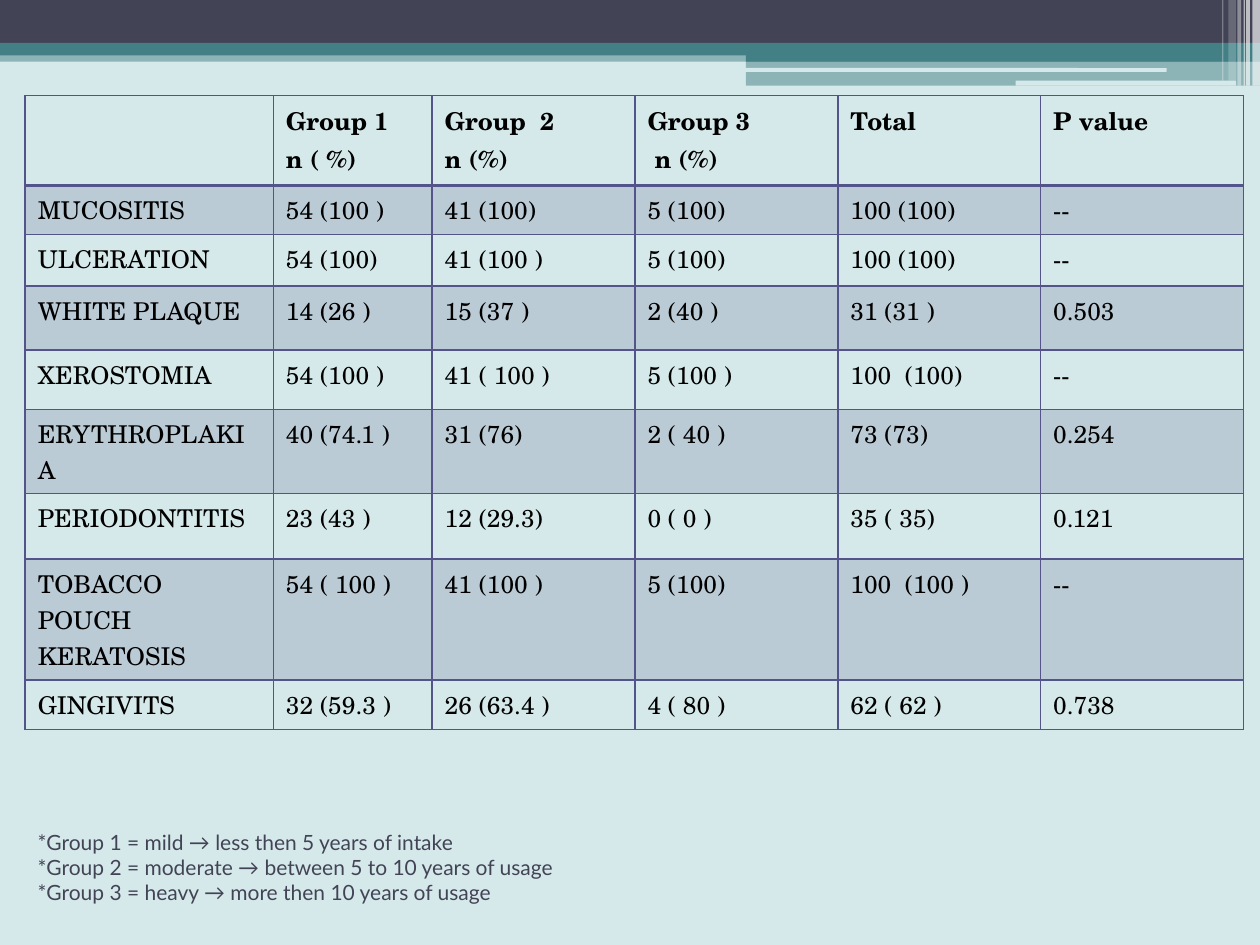
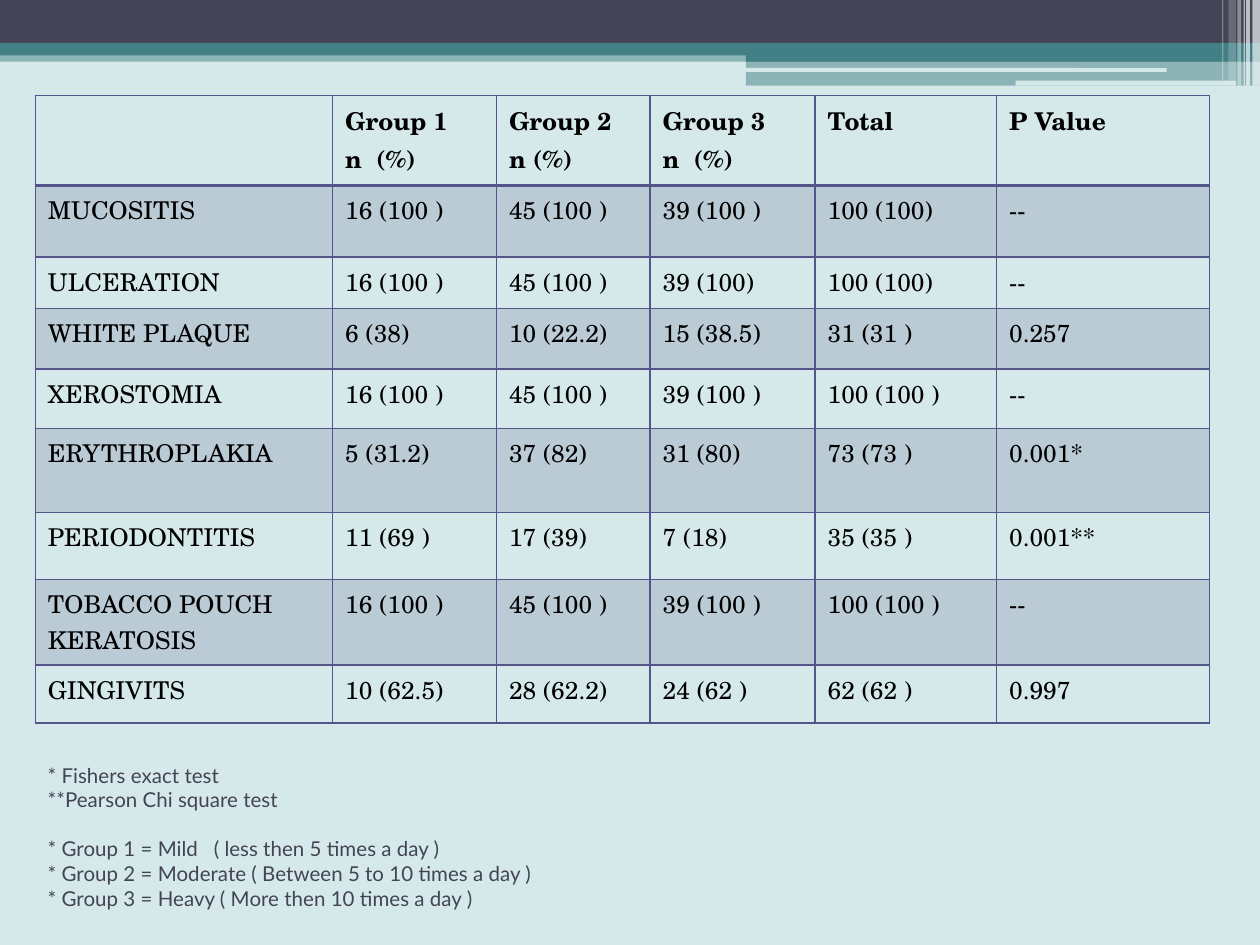
from lxml import etree
from pptx import Presentation
from pptx.dml.color import RGBColor
from pptx.enum.shapes import MSO_SHAPE
from pptx.enum.text import MSO_ANCHOR
from pptx.oxml.ns import qn
from pptx.util import Inches, Pt

RECT = MSO_SHAPE.RECTANGLE
ROUND = MSO_SHAPE.ROUNDED_RECTANGLE
MIDDLE = MSO_ANCHOR.MIDDLE
COLORS = {"back": "D6E9EA", "dark": "424456", "teal": "438086",
          "white": "FFFFFF", "rule": "53548A", "text": "000000"}
BODY, NOTE = "TeX Gyre Schola", "Lato"

BANDS = [
    (RECT, 0, 0.4, 10, 0.09, "teal", 50),
    (RECT, 0, 0, 10, 0.34, "dark", 100),
    (RECT, 0, 0.34, 10, 0.1, "teal", 100),
    (RECT, 5.92, 0.39, 4.08, 0.1, "teal", 100),
    (RECT, 5.92, 0.48, 4.08, 0.2, "teal", 50),
    (ROUND, 5.91, 0.54, 3.35, 0.03, "back", 100),
    (ROUND, 8.06, 0.64, 1.75, 0.04, "back", 100),
]
STRIPES = [(9.94, 0.06, 0.68, 65), (9.89, 0.03, 0.68, 65), (9.87, 0.01, 0.68, 60),
           (9.82, 0.03, 0.68, 40), (9.75, 0.06, 0.64, 20), (9.7, 0.01, 0.64, 30)]

YEARS = {
    "box": (0.2, 0.76),
    "cols": [1.97, 1.26, 1.61, 1.61, 1.61, 1.61],
    "rows": [0.71, 0.39, 0.41, 0.51, 0.47, 0.67, 0.52, 0.96, 0.39],
    "cells": [
        "|Group 1\nn ( %)|Group  2\nn (%)|Group 3\n n (%)|Total|P value",
        "MUCOSITIS|54 (100 )|41 (100)|5 (100)|100 (100)|--",
        "ULCERATION|54 (100)|41 (100 )|5 (100)|100 (100)|--",
        "WHITE PLAQUE|14 (26 )|15 (37 )|2 (40 )|31 (31 )|0.503",
        "XEROSTOMIA|54 (100 )|41 ( 100 )|5 (100 )|100  (100)|--",
        "ERYTHROPLAKIA|40 (74.1 )|31 (76)|2 ( 40 )|73 (73)|0.254",
        "PERIODONTITIS|23 (43 )|12 (29.3)|0 ( 0 )|35 ( 35)|0.121",
        "TOBACCO POUCH KERATOSIS|54 ( 100 )|41 (100 )|5 (100)|100  (100 )|--",
        "GINGIVITS|32 (59.3 )|26 (63.4 )|4 ( 80 )|62 ( 62 )|0.738",
    ],
    "note": (0.2, 5.88, 8.67, 2),
    "size": 12,
    "lines": [
        ["*Group 1 = mild → less then 5 years of intake",
         "*Group 2 = moderate → between 5 to 10 years of usage",
         "*Group 3 = heavy → more then 10 years of usage"],
    ],
}
TIMES = {
    "box": (0.28, 0.76),
    "cols": [2.36, 1.3, 1.22, 1.31, 1.44, 1.69],
    "rows": [0.71, 0.57, 0.41, 0.48, 0.47, 0.67, 0.53, 0.68, 0.46],
    "cells": [
        "|Group 1\nn  (%)|Group 2\nn (%)|Group 3\nn  (%)|Total|P Value",
        "MUCOSITIS|16 (100 )|45 (100 )|39 (100 )|100 (100)|--",
        "ULCERATION|16 (100 )|45 (100 )|39 (100)|100 (100)|--",
        "WHITE PLAQUE|6 (38)|10 (22.2)|15 (38.5)|31 (31 )|0.257",
        "XEROSTOMIA|16 (100 )|45 (100 )|39 (100 )|100 (100 )|--",
        "ERYTHROPLAKIA|5 (31.2)|37 (82)|31 (80)|73 (73 )|0.001*",
        "PERIODONTITIS|11 (69 )|17 (39)|7 (18)|35 (35 )|0.001**",
        "TOBACCO POUCH KERATOSIS|16 (100 )|45 (100 )|39 (100 )|100 (100 )|--",
        "GINGIVITS|10 (62.5)|28 (62.2)|24 (62 )|62 (62 )|0.997",
    ],
    "note": (0.28, 6.11, 8.67, 1.06),
    "size": 11.7,
    "lines": [
        ["* Fishers exact test", "**Pearson Chi square test"],
        ["* Group 1 = Mild   ( less then 5 times a day )",
         "* Group 2 = Moderate ( Between 5 to 10 times a day )",
         "* Group 3 = Heavy ( More then 10 times a day )"],
    ],
}


def color(name):
    """Return the named colour."""
    return RGBColor.from_string(COLORS[name])


def paint(fill, name, alpha, node):
    """Fill solidly, with an opacity in percent."""
    fill.solid()
    fill.fore_color.rgb = color(name)
    if alpha < 100:
        tone = node.find(qn("a:solidFill")).find(qn("a:srgbClr"))
        etree.SubElement(tone, qn("a:alpha"), val=str(alpha * 1000))


def style(para, font, size, name, bold=False):
    """Set the font of a paragraph."""
    para.font.name, para.font.size, para.font.bold = font, Pt(size), bold
    para.font.color.rgb = color(name)


def add_bar(slide, kind, x, y, w, h, name, alpha):
    """Draw one flat bar."""
    bar = slide.shapes.add_shape(kind, Inches(x), Inches(y), Inches(w), Inches(h))
    bar.shadow.inherit = False
    bar.line.fill.background()
    paint(bar.fill, name, alpha, bar.fill._xPr)


def add_header(slide):
    """Draw the background and the header bands."""
    slide.background.fill.solid()
    slide.background.fill.fore_color.rgb = color("back")
    for band in BANDS:
        add_bar(slide, *band)
    for x, w, h, alpha in STRIPES:
        add_bar(slide, RECT, x, 0, w, h, "white", alpha)


def add_rules(cell, row):
    """Draw the four borders of a cell, thicker under the head row."""
    thick = {"T": row == 1, "B": row == 0}
    props = cell._tc.get_or_add_tcPr()
    for i, side in enumerate("LRTB"):
        width = Pt(2 if thick.get(side) else 1)
        line = etree.Element(qn(f"a:ln{side}"), w=str(width))
        solid = etree.SubElement(line, qn("a:solidFill"))
        etree.SubElement(solid, qn("a:srgbClr"), val=COLORS["rule"])
        props.insert(i, line)


def add_cell(cell, text, row):
    """Fill, border and write one cell."""
    if row % 2:
        paint(cell.fill, "rule", 20, cell._tc.get_or_add_tcPr())
    else:
        cell.fill.background()
    add_rules(cell, row)
    cell.text = text
    for para in cell.text_frame.paragraphs:
        style(para, BODY, 14, "text", row == 0)


def add_grid(slide, data):
    """Place the table of findings."""
    cols, rows = data["cols"], data["rows"]
    x, y = data["box"]
    table = slide.shapes.add_table(len(rows), len(cols), Inches(x), Inches(y),
                                   Inches(sum(cols)), Inches(sum(rows))).table
    table.first_row = table.horz_banding = False
    for col, width in zip(table.columns, cols):
        col.width = Inches(width)
    for r, (height, line) in enumerate(zip(rows, data["cells"])):
        table.rows[r].height = Inches(height)
        for c, text in enumerate(line.split("|")):
            add_cell(table.cell(r, c), text, r)


def add_note(slide, data):
    """Write the groups of notes, set apart by one line."""
    frame = slide.shapes.add_textbox(*map(Inches, data["note"])).text_frame
    frame.word_wrap = True
    frame.vertical_anchor = MIDDLE
    para = frame.paragraphs[0]
    for g, group in enumerate(data["lines"]):
        for i, text in enumerate(group):
            if g or i:
                para = frame.add_paragraph()
            para.text = text
            style(para, NOTE, data["size"], "dark")
            if g and not i:
                para.space_before = Pt(14)


def add_page(deck, data):
    """Build one slide with a table and its notes."""
    slide = deck.slides.add_slide(deck.slide_layouts[6])
    add_header(slide)
    add_note(slide, data)
    add_grid(slide, data)


def main():
    """Build and save the deck."""
    deck = Presentation()
    deck.slide_width, deck.slide_height = Inches(10), Inches(7.5)
    for data in (YEARS, TIMES):
        add_page(deck, data)
    deck.save("out.pptx")


if __name__ == "__main__":
    main()
